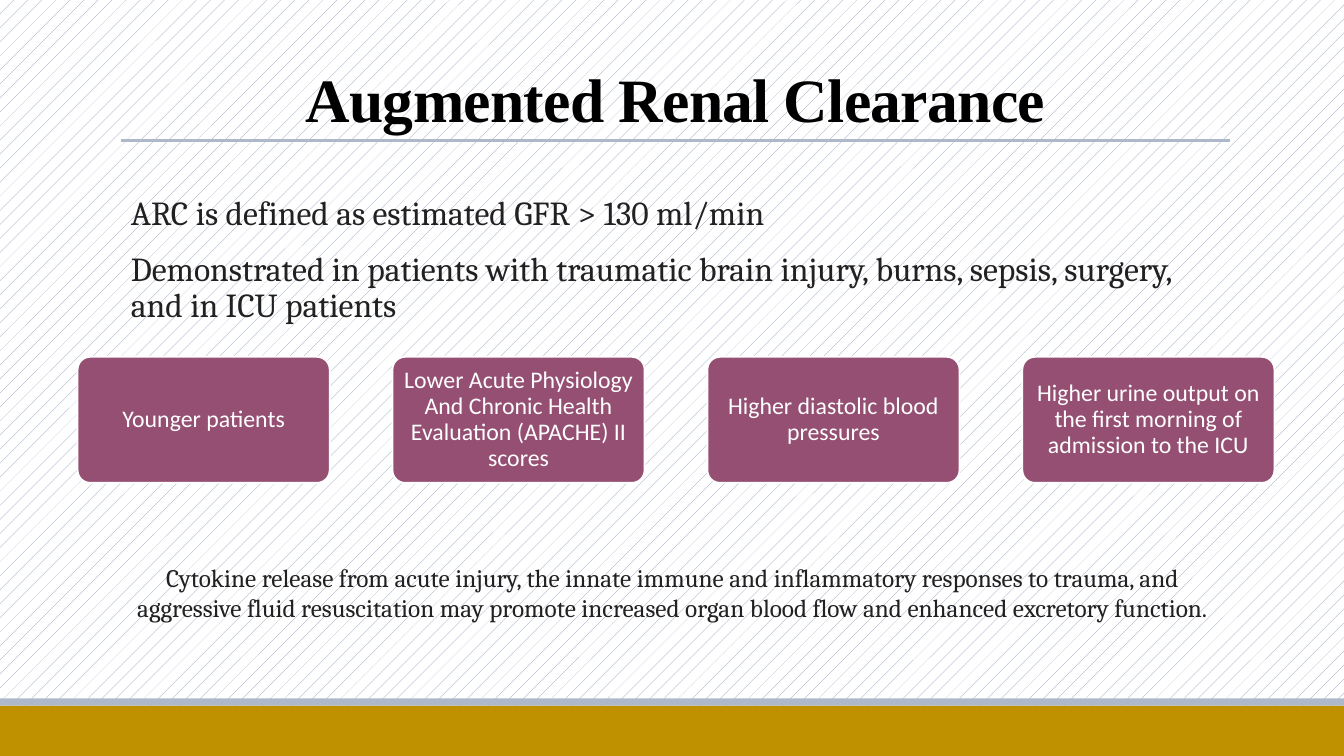
"""Build the Augmented Renal Clearance slide."""
from dataclasses import dataclass

from pptx import Presentation
from pptx.dml.color import RGBColor
from pptx.enum.dml import MSO_PATTERN
from pptx.enum.shapes import MSO_CONNECTOR, MSO_SHAPE
from pptx.enum.text import MSO_ANCHOR as Anchor, PP_ALIGN as Align
from pptx.oxml.xmlchemy import OxmlElement
from pptx.util import Inches, Pt


@dataclass(frozen=True)
class Theme:
    gold: RGBColor = RGBColor(0xBF, 0x90, 0x00)
    mist: RGBColor = RGBColor(0xAD, 0xB9, 0xCA)
    hatch: RGBColor = RGBColor(0x84, 0x96, 0xB0)
    plum: RGBColor = RGBColor(0x95, 0x4F, 0x72)
    ink: RGBColor = RGBColor(0x21, 0x21, 0x21)
    black: RGBColor = RGBColor(0, 0, 0)
    white: RGBColor = RGBColor(0xFF, 0xFF, 0xFF)
    title_size: int = 44
    body_size: int = 24
    note_size: int = 18
    card_size: int = 17


theme = Theme()


def write_text(box, *texts, font, size, color, bold=False, align=Align.LEFT,
               anchor=Anchor.TOP, margins=(0.1, 0.05), line_spacing=1.0,
               before=0, after=0, tracking=None):
    """Fill a shape with one formatted paragraph per text."""
    frame = box.text_frame
    frame.word_wrap = True
    frame.vertical_anchor = anchor
    frame.margin_left = frame.margin_right = Inches(margins[0])
    frame.margin_top = frame.margin_bottom = Inches(margins[1])
    for index, text in enumerate(texts):
        para = frame.add_paragraph() if index else frame.paragraphs[0]
        para.alignment = align
        para.line_spacing = line_spacing
        para.space_before = Pt(before if index else 0)
        para.space_after = Pt(after)
        span = para.add_run()
        span.text = text
        span.font.name = font
        span.font.size = Pt(size)
        span.font.bold = bold
        span.font.color.rgb = color
        if tracking is not None:
            span.font._element.set("spc", str(round(tracking * 100)))


deck = Presentation()
deck.slide_width = Inches(13.33)
deck.slide_height = Inches(7.5)
page = deck.slides.add_slide(deck.slide_layouts[6])

backdrop = page.background.fill
backdrop.patterned()
backdrop.pattern = MSO_PATTERN.PERCENT_5
backdrop.fore_color.rgb = theme.hatch
backdrop.back_color.rgb = theme.white

for top, height, color in ((7, 0.5, theme.gold), (6.93, 0.07, theme.mist)):
    band = page.shapes.add_shape(
        MSO_SHAPE.RECTANGLE, 0, Inches(top), deck.slide_width, Inches(height))
    band.shadow.inherit = False
    band.fill.solid()
    band.fill.fore_color.rgb = color
    band.line.fill.background()

rule = page.shapes.add_connector(
    MSO_CONNECTOR.STRAIGHT, Inches(1.2), Inches(1.39), Inches(12.2), Inches(1.39))
rule.line.color.rgb = theme.mist
rule.line.width = Pt(2.25)
rule._element.spPr.append(OxmlElement("a:effectLst"))

title = page.shapes.add_textbox(Inches(1.2), Inches(0.31), Inches(11), Inches(1.08))
write_text(title, "Augmented Renal Clearance", font="Times New Roman",
           size=theme.title_size, color=theme.black, bold=True,
           align=Align.CENTER, anchor=Anchor.BOTTOM, line_spacing=0.85,
           tracking=-0.5)

body = page.shapes.add_textbox(Inches(1.2), Inches(1.9), Inches(11), Inches(1.76))
write_text(body,
           "ARC is defined as estimated GFR > 130 ml/min",
           "Demonstrated in patients with traumatic brain injury, burns, sepsis, "
           "surgery, and in ICU patients",
           font="Cambria", size=theme.body_size, color=theme.ink,
           line_spacing=0.9, before=12, after=2)
body.text_frame.margin_right = 0

risk_factors = (
    "Younger patients",
    "Lower Acute Physiology And Chronic Health Evaluation (APACHE) II scores",
    "Higher diastolic blood pressures",
    "Higher urine output on the first morning of admission to the ICU",
)
first_left, last_left = 0.77, 10.14
pitch = (last_left - first_left) / (len(risk_factors) - 1)
for index, factor in enumerate(risk_factors):
    card = page.shapes.add_shape(
        MSO_SHAPE.ROUNDED_RECTANGLE, Inches(first_left + index * pitch),
        Inches(3.54), Inches(2.5), Inches(1.25))
    card.adjustments[0] = 0.1
    card.shadow.inherit = False
    card.fill.solid()
    card.fill.fore_color.rgb = theme.plum
    card.line.color.rgb = theme.white
    card.line.width = Pt(1.25)
    write_text(card, factor, font="Calibri", size=theme.card_size,
               color=theme.white, align=Align.CENTER, anchor=Anchor.MIDDLE,
               margins=(0.04, 0.02), line_spacing=0.9)

note = page.shapes.add_textbox(Inches(1.17), Inches(5.53), Inches(11), Inches(1.01))
write_text(note,
           "Cytokine release from acute injury, the innate immune and inflammatory "
           "responses to trauma, and aggressive fluid resuscitation may promote "
           "increased organ blood flow and enhanced excretory function.",
           font="Cambria", size=theme.note_size, color=theme.ink,
           align=Align.CENTER)

deck.save("out.pptx")
